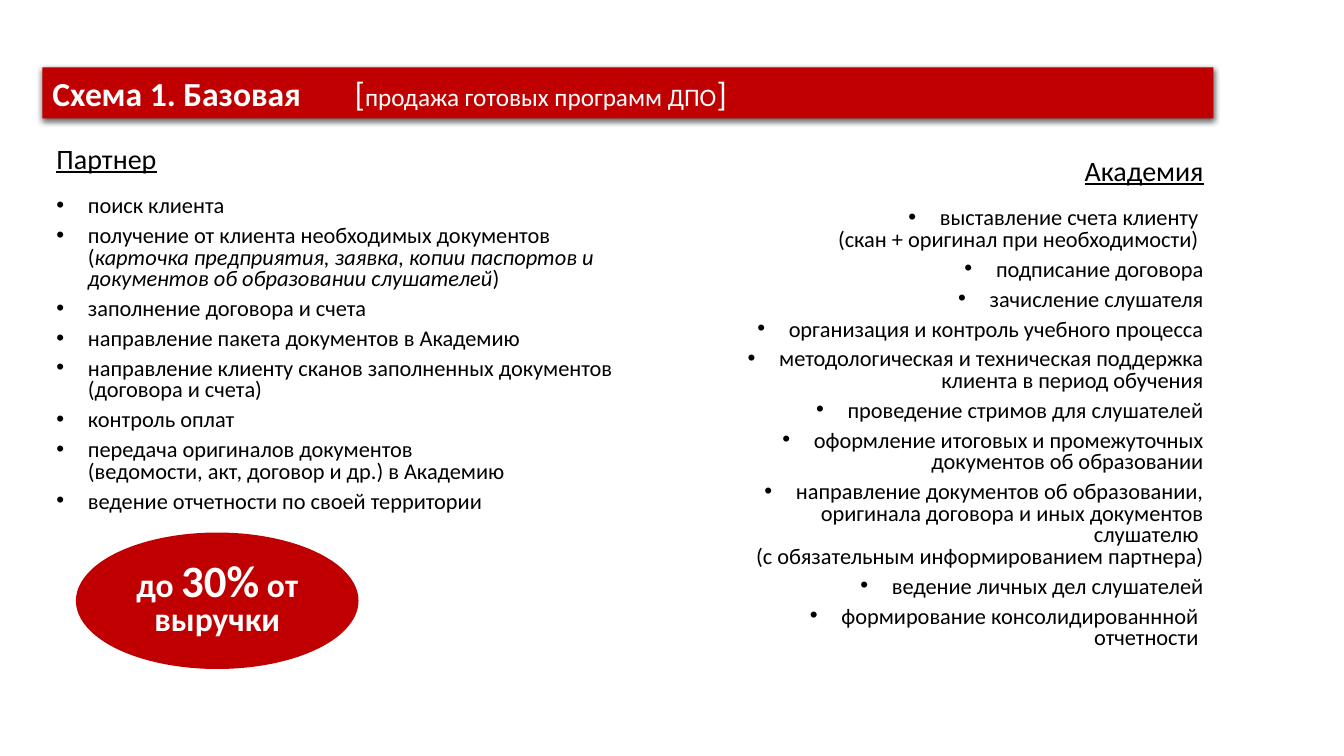
from dataclasses import dataclass

from lxml.etree import SubElement
from pptx import Presentation
from pptx.dml.color import RGBColor
from pptx.enum.shapes import MSO_SHAPE as Preset
from pptx.enum.text import MSO_ANCHOR as Anchor, MSO_AUTO_SIZE as AutoSize, PP_ALIGN as Align
from pptx.oxml.ns import qn
from pptx.util import Pt

COLORS = {"accent": "C00000", "light": "FFFFFF", "dark": "000000"}
FONT = "Calibri"
INDENT = 22.5
LINE_SPACING = 0.8


@dataclass(frozen=True)
class Box:
    left: float
    top: float
    width: float
    height: float


@dataclass(frozen=True)
class Span:
    text: str
    size: float | None = None
    bold: bool | None = None
    italic: bool | None = None


@dataclass(frozen=True)
class Side:
    heading: str
    heading_box: Box
    duties: list[list[Span]]
    duties_box: Box
    align: Align


def duties(*texts: str) -> list[list[Span]]:
    return [[Span(text)] for text in texts]


PARTNER = Side(
    "Партнер",
    Box(33.1, 97.2, 320.4, 31.7),
    [
        *duties("поиск клиента"),
        [
            Span("получение от клиента необходимых документов \n("),
            Span("карточка предприятия, заявка, копии паспортов и "
                 "документов об образовании слушателей", italic=True),
            Span(")"),
        ],
        *duties(
            "заполнение договора и счета",
            "направление пакета документов в Академию",
            "направление клиенту сканов заполненных документов \n(договора и счета)",
            "контроль оплат",
            "передача оригиналов документов \n(ведомости, акт, договор и др.) в Академию",
            "ведение отчетности по своей территории",
        ),
    ],
    Box(33.1, 136.8, 426.2, 236.2),
    Align.LEFT,
)
ACADEMY = Side(
    "Академия",
    Box(546.5, 105.8, 320.4, 31.7),
    duties(
        "выставление счета клиенту \n(скан + оригинал при необходимости) ",
        "подписание договора",
        "зачисление слушателя",
        "организация и контроль учебного процесса",
        "методологическая и техническая поддержка клиента в период обучения",
        "проведение стримов для слушателей",
        "оформление итоговых и промежуточных документов об образовании",
        "направление документов об образовании, оригинала договора и иных "
        "документов слушателю \n(с обязательным информированием партнера)",
        "ведение личных дел слушателей",
        "формирование консолидированнной \nотчетности ",
    ),
    Box(481.7, 145.4, 385.2, 325.4),
    Align.RIGHT,
)
SCHEME_TITLE = [
    Span("Схема 1. Базовая \t", bold=True),
    Span("["),
    Span("продажа готовых программ ДПО", 18),
    Span("]"),
]
REVENUE_SHARE = [Span("до "), Span("30%", 32), Span(" от выручки")]


def rgb(name: str) -> RGBColor:
    return RGBColor.from_string(COLORS[name])


def place(shape, box: Box) -> None:
    shape.left, shape.top = Pt(box.left), Pt(box.top)
    shape.width, shape.height = Pt(box.width), Pt(box.height)


def fill(shape, color: str) -> None:
    shape.fill.solid()
    shape.fill.fore_color.rgb = rgb(color)


def prepare_frame(shape, anchor: Anchor):
    """Wrap the text and keep the shape at its given size."""
    frame = shape.text_frame
    frame.word_wrap = True
    frame.auto_size = AutoSize.NONE
    frame.vertical_anchor = anchor
    return frame


def style(paragraph, color: str, size: float, bold: bool = False,
          underline: bool | None = None) -> None:
    font = paragraph.font
    font.name, font.size = FONT, Pt(size)
    font.bold, font.underline = bold, underline
    font.color.rgb = rgb(color)


def write(paragraph, spans: list[Span]) -> None:
    """Add the spans as runs, turning each newline into a line break."""
    for span in spans:
        for number, line in enumerate(span.text.split("\n")):
            if number:
                paragraph.add_line_break()
            run = paragraph.add_run()
            run.text = line
            if span.size:
                run.font.size = Pt(span.size)
            if span.bold is not None:
                run.font.bold = span.bold
            if span.italic is not None:
                run.font.italic = span.italic


def add_bullet(paragraph) -> None:
    properties = paragraph._p.get_or_add_pPr()
    properties.set("marL", str(Pt(INDENT)))
    properties.set("indent", str(-Pt(INDENT)))
    SubElement(properties, qn("a:buFont"), typeface="Arial")
    SubElement(properties, qn("a:buChar"), char="•")


def add_tab_stop(paragraph, position: float) -> None:
    tabs = SubElement(paragraph._p.get_or_add_pPr(), qn("a:tabLst"))
    SubElement(tabs, qn("a:tab"), pos=str(Pt(position)), algn="l")


def add_soft_shadow(shape) -> None:
    effects = SubElement(shape._element.spPr, qn("a:effectLst"))
    shadow = SubElement(effects, qn("a:outerShdw"), blurRad=str(Pt(4.5)),
                        dist=str(Pt(1.5)), dir="5400000", rotWithShape="0")
    color = SubElement(shadow, qn("a:srgbClr"), val=COLORS["dark"])
    SubElement(color, qn("a:alpha"), val="63000")


def draw_title(title) -> None:
    place(title, Box(30.2, 48.2, 836.6, 36.4))
    fill(title, "accent")
    add_soft_shadow(title)
    paragraph = prepare_frame(title, Anchor.TOP).paragraphs[0]
    paragraph.alignment = Align.LEFT
    add_tab_stop(paragraph, 216)
    style(paragraph, "light", 24)
    write(paragraph, SCHEME_TITLE)


def draw_side(side: Side, heading, body) -> None:
    place(heading, side.heading_box)
    caption = prepare_frame(heading, Anchor.TOP).paragraphs[0]
    caption.alignment, caption.space_before = side.align, Pt(0)
    style(caption, "dark", 20, underline=True)
    write(caption, [Span(side.heading)])

    place(body, side.duties_box)
    frame = prepare_frame(body, Anchor.TOP)
    for number, duty in enumerate(side.duties):
        paragraph = frame.add_paragraph() if number else frame.paragraphs[0]
        paragraph.alignment, paragraph.line_spacing = side.align, LINE_SPACING
        paragraph.space_before = Pt(6 if number else 0)
        add_bullet(paragraph)
        style(paragraph, "dark", 16)
        write(paragraph, duty)


def draw_revenue_share(shapes) -> None:
    oval = shapes.add_shape(Preset.OVAL, Pt(54.7), Pt(380.9), Pt(200.9), Pt(96.5))
    oval.shadow.inherit = False
    fill(oval, "accent")
    oval.line.color.rgb = rgb("accent")
    oval.line.width = Pt(1)
    paragraph = prepare_frame(oval, Anchor.MIDDLE).paragraphs[0]
    paragraph.alignment, paragraph.line_spacing = Align.CENTER, LINE_SPACING
    style(paragraph, "light", 24, bold=True)
    write(paragraph, REVENUE_SHARE)


def main() -> None:
    deck = Presentation()
    deck.slide_width, deck.slide_height = Pt(960), Pt(540)
    comparison = deck.slide_layouts.get_by_name("Comparison")
    slide = deck.slides.add_slide(comparison)
    title, left_heading, left_list, right_heading, right_list = slide.placeholders
    draw_title(title)
    draw_side(PARTNER, left_heading, left_list)
    draw_side(ACADEMY, right_heading, right_list)
    draw_revenue_share(slide.shapes)
    deck.save("out.pptx")


if __name__ == "__main__":
    main()
